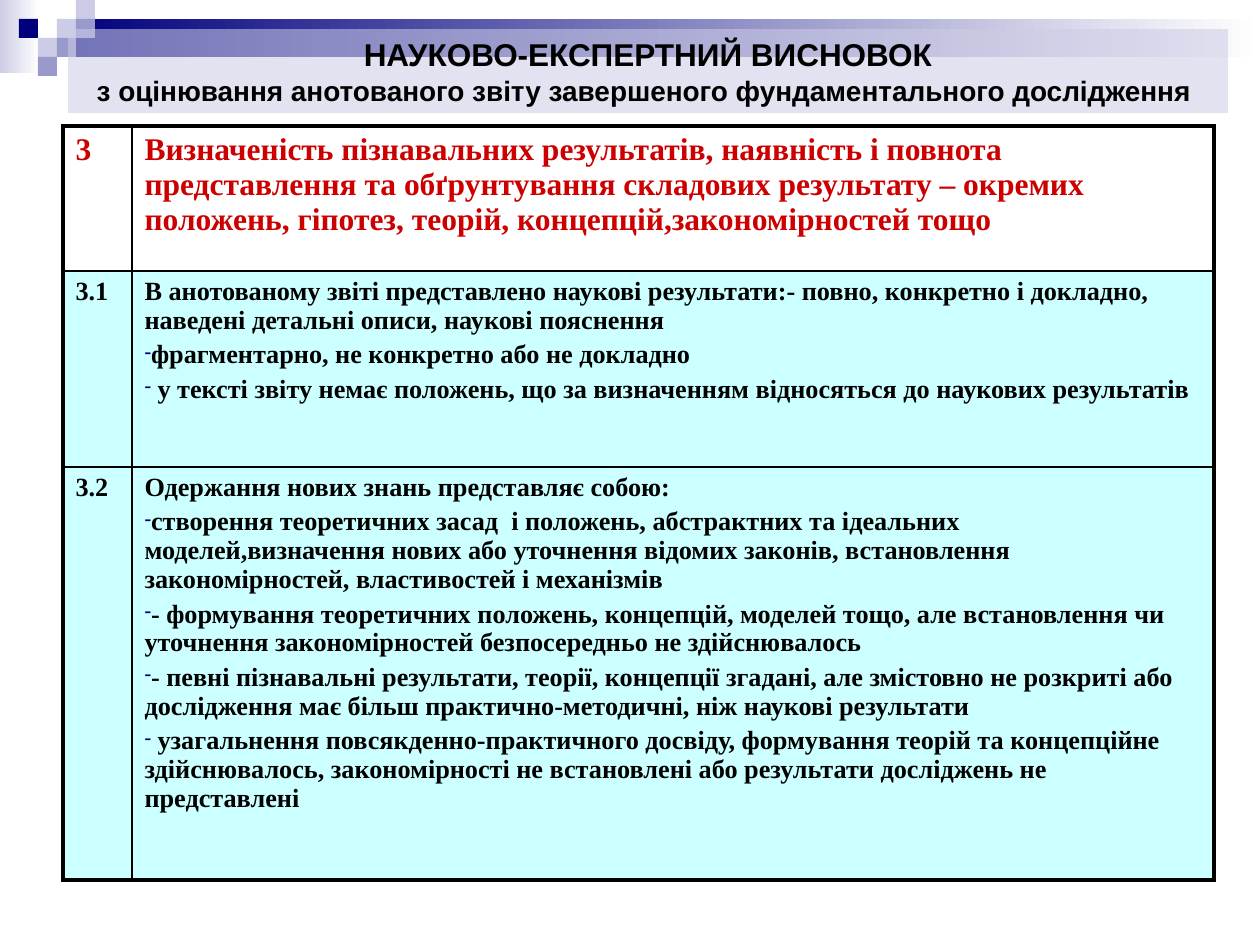
from lxml.etree import SubElement
from pptx import Presentation
from pptx.dml.color import RGBColor
from pptx.enum.shapes import MSO_SHAPE as Preset
from pptx.enum.text import MSO_ANCHOR as Anchor, MSO_AUTO_SIZE as AutoSize, PP_ALIGN as Align
from pptx.oxml.ns import qn
from pptx.util import Pt

EMU_PER_PX = 914400 / 126
NAVY, LILAC, VIOLET = "00007D", "CCCCE6", "9999CC"
BLACK, WHITE, RED, CYAN = "000000", "FFFFFF", "CC0000", "CCFFFF"

# Decorative squares: column, row, colour on a 19 px grid
SQUARES = [
    (3, 1, LILAC), (4, 0, LILAC), (4, 1, VIOLET), (2, 2, LILAC),
    (1, 1, NAVY), (3, 2, VIOLET), (2, 3, VIOLET),
]

TITLE_LINES = [
    ("НАУКОВО-ЕКСПЕРТНИЙ ВИСНОВОК", 18),
    ("з оцінювання анотованого звіту завершеного фундаментального дослідження ", 16),
]

# Table rows: height, number, lead text, dashed items, text size, text colour, fill
CRITERIA = [
    (145, "3",
     "Визначеність пізнавальних результатів, наявність і повнота представлення та "
     "обґрунтування складових результату – окремих положень, гіпотез, теорій, "
     "концепцій,закономірностей тощо",
     [], 18, RED, WHITE),
    (196, "3.1",
     "В анотованому звіті представлено наукові результати:- повно, конкретно і "
     "докладно, наведені детальні описи, наукові пояснення",
     ["фрагментарно, не конкретно або не докладно",
      " у тексті звіту немає положень, що за визначенням відносяться до наукових "
      "результатів"],
     15, BLACK, CYAN),
    (413, "3.2",
     "Одержання нових знань представляє собою:",
     ["створення теоретичних засад  і положень, абстрактних та ідеальних "
      "моделей,визначення нових або уточнення відомих законів, встановлення "
      "закономірностей, властивостей і механізмів",
      "- формування теоретичних положень, концепцій, моделей тощо, але встановлення "
      "чи уточнення закономірностей безпосередньо не здійснювалось",
      "- певні пізнавальні результати, теорії, концепції згадані, але змістовно не "
      "розкриті або дослідження має більш практично-методичні, ніж наукові результати",
      " узагальнення повсякденно-практичного досвіду, формування теорій та "
      "концепційне здійснювалось, закономірності не встановлені або результати "
      "досліджень не представлені"],
     15, BLACK, CYAN),
]


def px(value):
    return round(value * EMU_PER_PX)


def rgb(value):
    return RGBColor.from_string(value)


def paint(fill, color):
    fill.solid()
    fill.fore_color.rgb = rgb(color)


def style_font(paragraph, name, size, color):
    font = paragraph.font
    font.name, font.size, font.bold = name, Pt(size), True
    font.color.rgb = rgb(color)


def add_block(slide, left, top, width, height, color, end_color=None):
    """Add a plain rectangle, fading to end_color from left to right if given."""
    shape = slide.shapes.add_shape(
        Preset.RECTANGLE, px(left), px(top), px(width), px(height))
    shape.shadow.inherit = False
    shape.line.fill.background()
    if end_color is None:
        paint(shape.fill, color)
        return
    shape.fill.gradient()
    shape.fill.gradient_angle = 0
    for stop, stop_color in zip(shape.fill.gradient_stops, (color, end_color)):
        stop.color.rgb = rgb(stop_color)


def add_decoration(slide):
    add_block(slide, 0, 0, 39, 73, LILAC, WHITE)
    add_block(slide, 57, 19, 1203, 38, NAVY, WHITE)
    for column, row, color in SQUARES:
        add_block(slide, 19 * column, 19 * row, 19, 19, color)


def format_title(slide):
    title = slide.shapes.title
    title.left, title.top, title.width, title.height = map(px, (68, 29, 1160, 84))
    paint(title.fill, LILAC)
    color = title.fill._xPr.find(qn("a:solidFill"))[0]
    SubElement(color, qn("a:alpha"), val="56000")

    frame = title.text_frame
    frame.word_wrap = True
    frame.auto_size = AutoSize.NONE
    frame.vertical_anchor = Anchor.MIDDLE
    frame.text = "\n".join(text for text, size in TITLE_LINES)
    for paragraph, (text, size) in zip(frame.paragraphs, TITLE_LINES):
        paragraph.alignment = Align.CENTER
        paragraph.space_before = Pt(0)
        style_font(paragraph, "Arial", size, BLACK)
    # Bring the title in front of the decoration
    slide.shapes._spTree.append(title._element)


def add_dash(paragraph):
    properties = paragraph._p.get_or_add_pPr()
    color = SubElement(properties, qn("a:buClr"))
    SubElement(color, qn("a:srgbClr"), val=NAVY)
    SubElement(properties, qn("a:buSzPct"), val="75000")
    SubElement(properties, qn("a:buChar"), char="-")


def set_borders(cell, widths):
    """Draw black borders; widths are left, right, top, bottom in points."""
    properties = cell._tc.get_or_add_tcPr()
    for side, width in zip("LRTB", widths):
        line = SubElement(properties, qn(f"a:ln{side}"), w=str(Pt(width)))
        fill = SubElement(line, qn("a:solidFill"))
        SubElement(fill, qn("a:srgbClr"), val=BLACK)


def fill_cell(cell, lead, items, size, color):
    frame = cell.text_frame
    frame.text = "\n".join([lead, *items])
    for index, paragraph in enumerate(frame.paragraphs):
        paragraph.space_before = Pt(size * 0.2)
        if index:
            add_dash(paragraph)
        style_font(paragraph, "Times New Roman", size, color)


def add_criteria_table(slide):
    widths = (69, 1082)
    heights = [row[0] for row in CRITERIA]
    table = slide.shapes.add_table(
        len(heights), len(widths), px(63), px(126),
        px(sum(widths)), px(sum(heights))).table
    table.first_row = table.horz_banding = False
    for column, width in zip(table.columns, widths):
        column.width = px(width)

    last = len(CRITERIA) - 1
    for index, (height, number, lead, items, size, color, fill) in enumerate(CRITERIA):
        table.rows[index].height = px(height)
        for column, (text, dashed) in enumerate([(number, []), (lead, items)]):
            cell = table.cell(index, column)
            # Thick outer frame, thin inner lines
            outer = (column == 0, column == 1, index == 0, index == last)
            set_borders(cell, [2.25 if edge else 1 for edge in outer])
            paint(cell.fill, fill)
            fill_cell(cell, text, dashed, size, color)


def main():
    presentation = Presentation()
    presentation.slide_width, presentation.slide_height = px(1260), px(945)
    slide = presentation.slides.add_slide(presentation.slide_layouts[5])
    add_decoration(slide)
    add_criteria_table(slide)
    format_title(slide)
    presentation.save("out.pptx")


if __name__ == "__main__":
    main()
